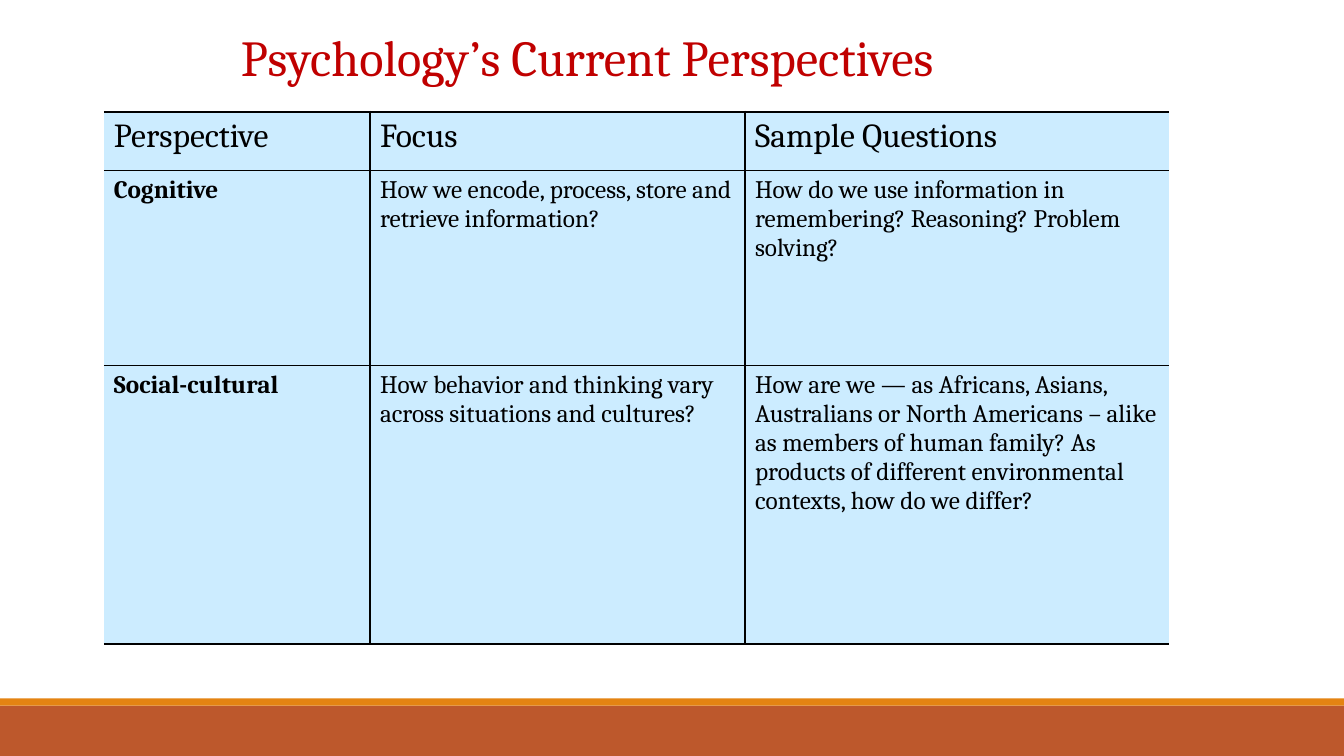
from dataclasses import dataclass

from lxml import etree
from pptx import Presentation
from pptx.dml.color import RGBColor
from pptx.enum.shapes import MSO_SHAPE
from pptx.enum.text import MSO_ANCHOR, PP_ALIGN
from pptx.oxml.ns import qn
from pptx.slide import Slide
from pptx.table import _Cell
from pptx.text.text import TextFrame
from pptx.util import Inches, Pt

RECTANGLE = MSO_SHAPE.RECTANGLE
LEFT = PP_ALIGN.LEFT
TOP, MIDDLE = MSO_ANCHOR.TOP, MSO_ANCHOR.MIDDLE
TITLE_ONLY = 5
FONT = "Cambria"
COLORS = {
    "title": "C00000",
    "text": "000000",
    "border": "000000",
    "cell": "CCECFF",
    "band": "BD582C",
    "stripe": "E48312",
}
THIN, THICK = 1, 2.25
COLUMN_WIDTHS = (2.64, 3.72, 4.21)
ROW_HEIGHTS = (0.58, 1.94, 2.76)
ROWS = (
    ("Perspective", "Focus", "Sample Questions"),
    (
        "Cognitive",
        "How we encode, process, store and retrieve information?",
        "How do we use information in remembering? Reasoning? Problem solving?",
    ),
    (
        "Social-cultural",
        "How behavior and thinking vary across situations and cultures?",
        "How are we — as Africans, Asians, Australians or North Americans – alike "
        "as members of human family? As products of different environmental "
        "contexts, how do we differ?",
    ),
)


@dataclass(frozen=True)
class Band:
    top: float
    height: float
    color: str


BANDS = (Band(7, 0.5, "band"), Band(6.93, 0.07, "stripe"))


def rgb(name: str) -> RGBColor:
    return RGBColor.from_string(COLORS[name])


def add_band(slide: Slide, band: Band) -> None:
    shape = slide.shapes.add_shape(
        RECTANGLE, 0, Inches(band.top), Inches(13.33), Inches(band.height)
    )
    shape.shadow.inherit = False
    shape.fill.solid()
    shape.fill.fore_color.rgb = rgb(band.color)
    shape.line.fill.background()


def write_text(
    frame: TextFrame, text: str, size: float, color: str, bold: bool = False
) -> None:
    paragraph = frame.paragraphs[0]
    paragraph.alignment = LEFT
    run = paragraph.add_run()
    run.text = text
    run.font.name = FONT
    run.font.size = Pt(size)
    run.font.bold = bold
    run.font.color.rgb = rgb(color)


def set_borders(cell: _Cell, widths: dict[str, float]) -> None:
    """Draw the cell's edges, in the order L, R, T, B; a width of 0 hides one."""
    properties = cell._tc.get_or_add_tcPr()
    for position, (side, width) in enumerate(widths.items()):
        line = etree.Element(qn(f"a:ln{side}"), w=str(int(Pt(width))))
        properties.insert(position, line)
        if width:
            fill = etree.SubElement(line, qn("a:solidFill"))
            etree.SubElement(fill, qn("a:srgbClr"), val=COLORS["border"])
        else:
            etree.SubElement(line, qn("a:noFill"))


def add_title(slide: Slide) -> None:
    title = slide.shapes.title
    title.left, title.top = Inches(2.29), Inches(0.2)
    title.width, title.height = Inches(8.14), Inches(0.71)
    title.text_frame.word_wrap = True
    title.text_frame.vertical_anchor = MIDDLE
    write_text(title.text_frame, "Psychology’s Current Perspectives", 36, "title")


def add_perspectives_table(slide: Slide) -> None:
    last_row, last_column = len(ROWS) - 1, len(COLUMN_WIDTHS) - 1
    table = slide.shapes.add_table(
        len(ROWS), len(COLUMN_WIDTHS), Inches(1.03), Inches(1.11),
        Inches(sum(COLUMN_WIDTHS)), Inches(sum(ROW_HEIGHTS)),
    ).table
    table.first_row = table.horz_banding = False
    for column, width in zip(table.columns, COLUMN_WIDTHS):
        column.width = Inches(width)
    for row, height in zip(table.rows, ROW_HEIGHTS):
        row.height = Inches(height)

    for i, texts in enumerate(ROWS):
        for j, text in enumerate(texts):
            cell = table.cell(i, j)
            cell.vertical_anchor = TOP
            cell.fill.solid()
            cell.fill.fore_color.rgb = rgb("cell")
            set_borders(cell, {
                "L": THIN if j > 0 else 0,
                "R": THIN if j < last_column else 0,
                "T": THIN if i > 0 else THICK,
                "B": THIN if i < last_row else THICK,
            })
            size = 24 if i == 0 else 18
            write_text(cell.text_frame, text, size, "text", i > 0 and j == 0)


def main() -> None:
    presentation = Presentation()
    presentation.slide_width = Inches(13.33)
    presentation.slide_height = Inches(7.5)
    slide = presentation.slides.add_slide(presentation.slide_layouts[TITLE_ONLY])
    for band in BANDS:
        add_band(slide, band)
    add_perspectives_table(slide)
    add_title(slide)
    presentation.save("out.pptx")


if __name__ == "__main__":
    main()
